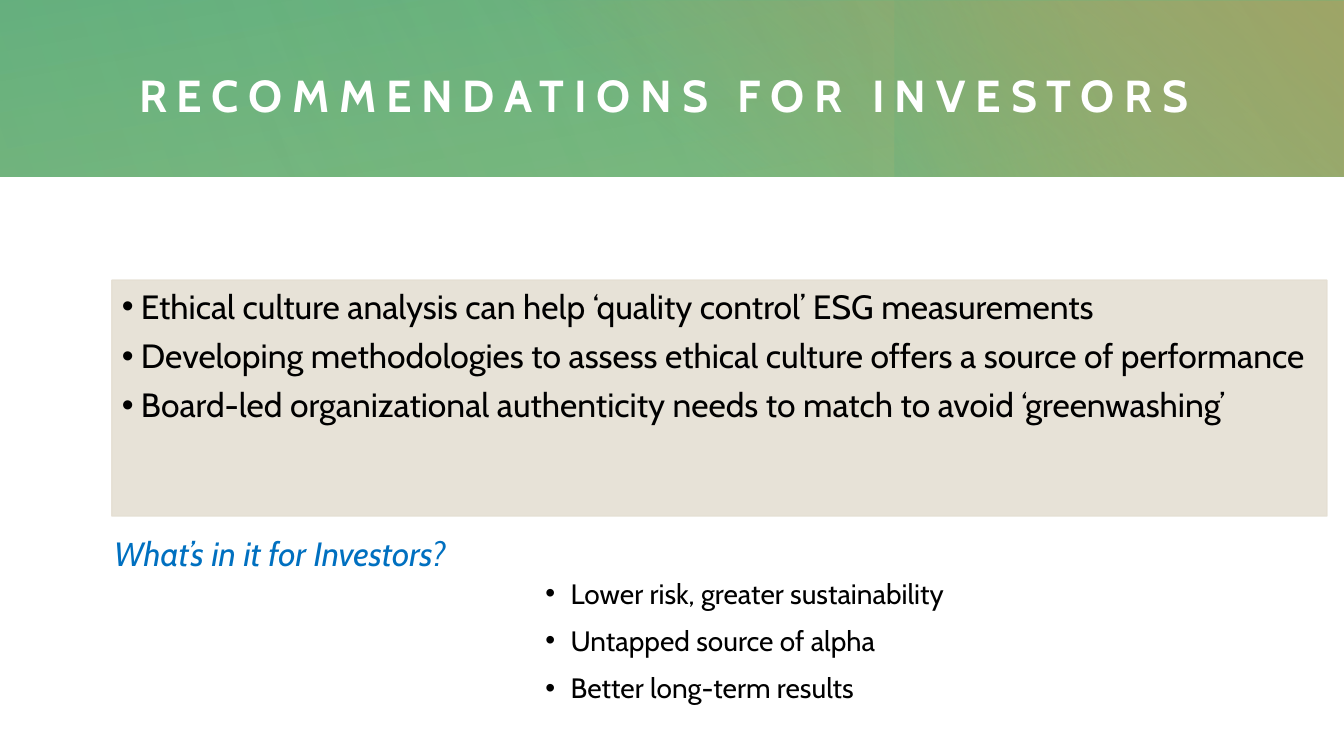
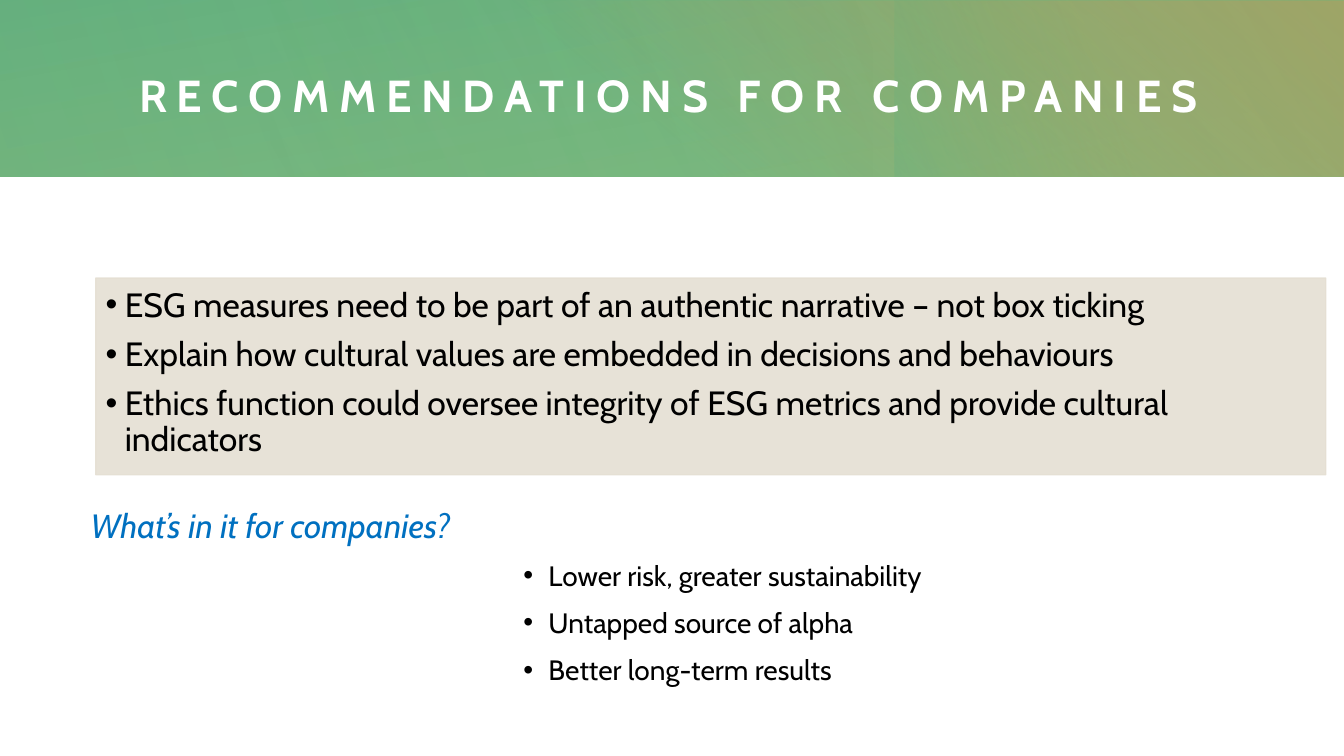
"""Build two recommendation slides with a shared gradient title band."""
from lxml import etree
from pptx import Presentation
from pptx.dml.color import RGBColor
from pptx.enum.shapes import MSO_SHAPE
from pptx.enum.text import MSO_ANCHOR, PP_ALIGN
from pptx.oxml.ns import qn
from pptx.util import Inches, Pt

RECT = MSO_SHAPE.RECTANGLE
TOP, MIDDLE = MSO_ANCHOR.TOP, MSO_ANCHOR.MIDDLE
LEFT = PP_ALIGN.LEFT

FONT = "Cabin"
WHITE, BLACK, BLUE, SAND = "FFFFFF", "000000", "0070C0", "E5DFD3"
GREEN, TEAL, OLIVE, GOLD = "6DB16C", "64B183", "83AF62", "B5A066"

# box, rotation, clockwise gradient angle, (position, colour, opacity) stops
BAND_LAYERS = [
    ((0, 0, 13.33, 1.75), 0, 260, [(0, GREEN, 83), (100, TEAL, 100)]),
    ((4.81, 0.01, 8.52, 1.74), 0, 310, [(22, GOLD, 0), (99, GOLD, 100)]),
    ((9.87, -0.99, 1.75, 3.74), 270, 250, [(45, OLIVE, 0), (99, TEAL, 33)]),
    ((2.68, 0, 10.64, 1.75), 180, 330, [(0, GREEN, 30), (99, GREEN, 0)]),
    ((0, 0, 8.65, 1.75), 0, 340, [(0, GREEN, 21), (99, GREEN, 0)]),
]
TITLE_BOX = (1.38, 0.41, 11.35, 1.06)
NO_INSETS = (0, 0, 0, 0)
TEXT_INSETS = (0.1, 0.05, 0.1, 0.05)
PANEL_INSETS = (0.1, 0.1, 0.14, 0.16)
BENEFITS = [
    "Lower risk, greater sustainability",
    "Untapped source of alpha",
    "Better long-term results",
]
SLIDES = [
    {
        "title": "RECOMMENDATIONS FOR INVESTORS",
        "panel": (1.11, 2.78, 12.05, 2.34),
        "points": [
            "Ethical culture analysis can help ‘quality control’ ESG measurements",
            "Developing methodologies to assess ethical culture offers a source of performance",
            "Board-led organizational authenticity needs to match to avoid ‘greenwashing’",
        ],
        "question": "What’s in it for Investors?",
        "question_box": (1.03, 5.24, 10.55, 0.5),
        "benefits_box": (4.91, 5.65, 6.67, 1.6),
    },
    {
        "title": "RECOMMENDATIONS FOR COMPANIES",
        "panel": (0.95, 2.76, 12.2, 1.95),
        "points": [
            "ESG measures need to be part of an authentic narrative – not box ticking",
            "Explain how cultural values are embedded in decisions and behaviours",
            "Ethics function could oversee integrity of ESG metrics and provide cultural indicators",
        ],
        "question": "What’s in it for companies?",
        "question_box": (0.8, 4.96, 10.55, 0.5),
        "benefits_box": (4.69, 5.47, 6.67, 1.6),
    },
]


def rgb(value):
    return RGBColor.from_string(value)


def inches(box):
    return [Inches(v) for v in box]


def set_opacity(sp, percents):
    colours = sp._element.spPr.iter(qn("a:srgbClr"))
    for colour, percent in zip(colours, percents):
        etree.SubElement(colour, qn("a:alpha"), val=str(percent * 1000))


def add_rect(s, box):
    sp = s.shapes.add_shape(RECT, *inches(box))
    sp.shadow.inherit = False
    return sp


def add_band(s):
    for box, rotation, angle, stops in BAND_LAYERS:
        sp = add_rect(s, box)
        sp.rotation = rotation
        sp.line.fill.background()
        sp.fill.gradient()
        sp.fill.gradient_angle = 360 - angle
        for stop, (position, colour, _) in zip(sp.fill.gradient_stops, stops):
            stop.position = position / 100
            stop.color.rgb = rgb(colour)
        set_opacity(sp, [opacity for _, _, opacity in stops])


def add_panel(s, box):
    sp = add_rect(s, box)
    sp.fill.solid()
    sp.fill.fore_color.rgb = rgb(SAND)
    sp.line.color.rgb = rgb(SAND)
    sp.line.width = Pt(1)
    set_opacity(sp, [90, 90])
    return sp


def write(sp, lines, size, colour, insets=NO_INSETS, anchor=TOP, bold=False, italic=False):
    tf = sp.text_frame
    tf.word_wrap = True
    tf.vertical_anchor = anchor
    tf.margin_left, tf.margin_top, tf.margin_right, tf.margin_bottom = inches(insets)
    tf.text = "\n".join(lines)
    for p in tf.paragraphs:
        p.alignment = LEFT
        font = p.runs[0].font
        font.name, font.size = FONT, Pt(size)
        font.bold, font.italic = bold, italic
        font.color.rgb = rgb(colour)
    return tf


def add_bullets(tf, margin, hang, spacing, before=0, after=0):
    for p in tf.paragraphs:
        p.line_spacing = spacing
        p.space_before, p.space_after = Pt(before), Pt(after)
        pPr = p._p.get_or_add_pPr()
        pPr.set("marL", str(Inches(margin)))
        pPr.set("indent", str(-Inches(hang)))
        etree.SubElement(pPr, qn("a:buFont"), typeface="Arial")
        etree.SubElement(pPr, qn("a:buChar"), char="•")


def add_title(s, text):
    sp = s.shapes.add_textbox(*inches(TITLE_BOX))
    tf = write(sp, [text], 32, WHITE, anchor=MIDDLE, bold=True)
    tf.paragraphs[0].runs[0]._r.get_or_add_rPr().set("spc", "700")


def build_slide(prs, content):
    s = prs.slides.add_slide(prs.slide_layouts[6])
    add_band(s)
    add_title(s, content["title"])
    benefits = s.shapes.add_textbox(*inches(content["benefits_box"]))
    add_bullets(write(benefits, BENEFITS, 20, BLACK), 0.75, 0.25, 1.2, before=5)
    question = s.shapes.add_textbox(*inches(content["question_box"]))
    write(question, [content["question"]], 24, BLUE, TEXT_INSETS, italic=True)
    panel = add_panel(s, content["panel"])
    points = write(panel, content["points"], 24, BLACK, PANEL_INSETS)
    add_bullets(points, 0.19, 0.19, 0.9, after=9.2)


def main():
    prs = Presentation()
    prs.slide_width, prs.slide_height = Inches(13.33), Inches(7.5)
    for content in SLIDES:
        build_slide(prs, content)
    prs.save("out.pptx")


if __name__ == "__main__":
    main()
